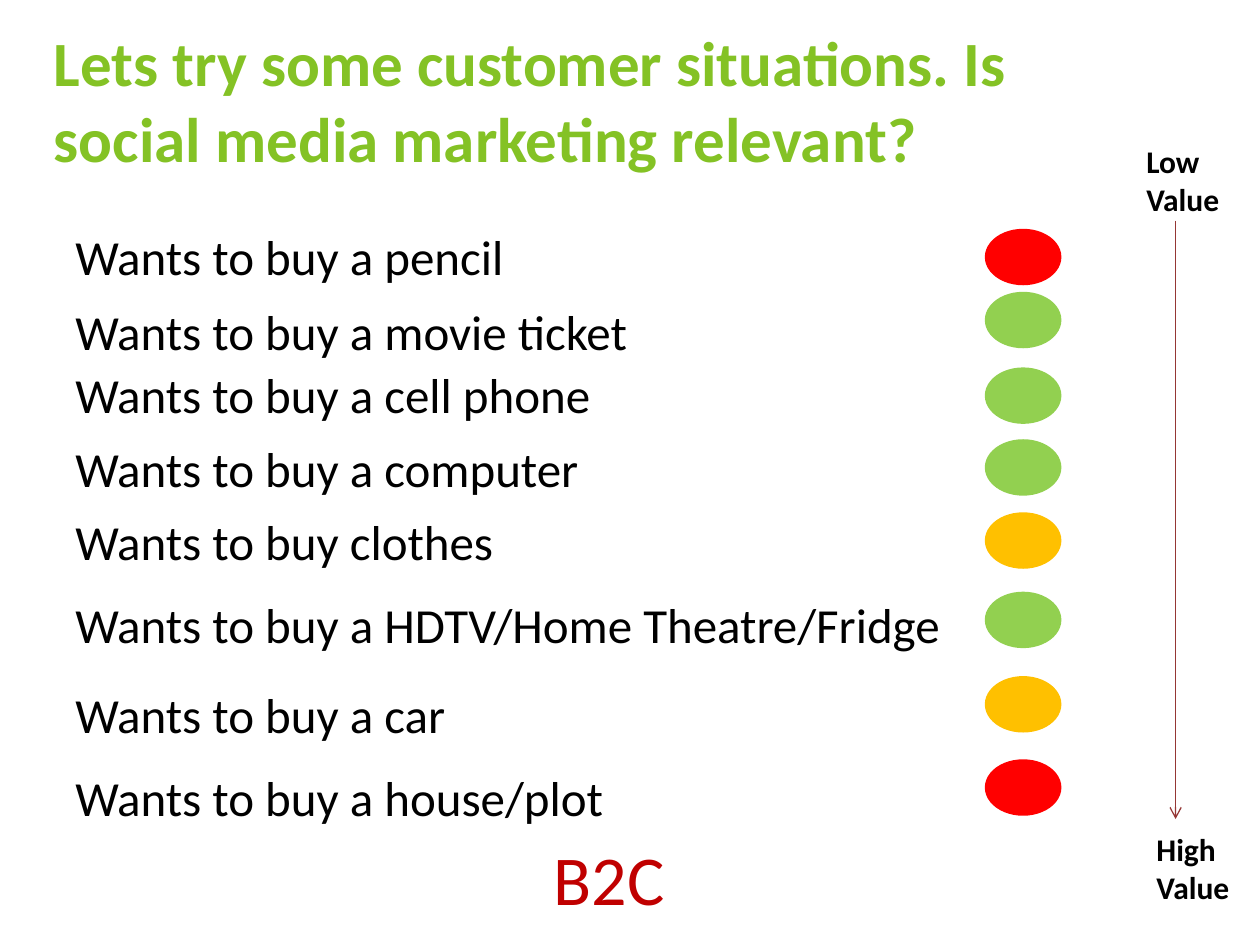
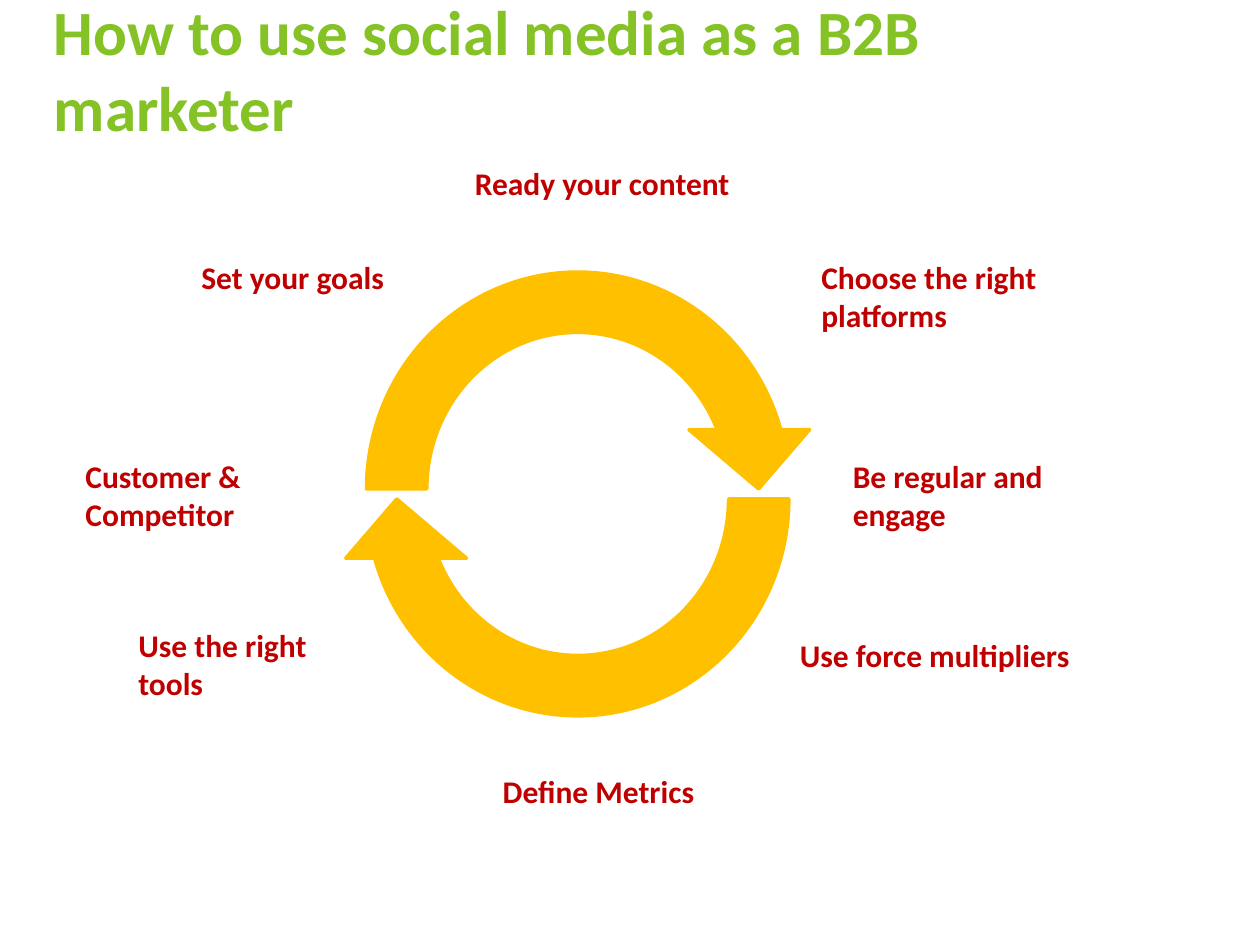
"""Build two slides on when and how social media marketing works."""
from lxml import etree
from pptx import Presentation
from pptx.dml.color import RGBColor
from pptx.enum.shapes import MSO_CONNECTOR, MSO_SHAPE
from pptx.enum.text import MSO_ANCHOR, PP_ALIGN
from pptx.oxml.ns import qn
from pptx.util import Pt

PX = 9144
FONT = "Calibri"
BLACK, TITLE_GREEN, CRIMSON = "000000", "84C225", "C00000"
RED, AMBER, GREEN, MAROON = "FF0000", "FFC000", "92D050", "953735"


def add_text(slide, box, text, size, color, bold=False, align=PP_ALIGN.LEFT, anchor=MSO_ANCHOR.TOP):
    frame = slide.shapes.add_textbox(*(value * PX for value in box)).text_frame
    frame.word_wrap = True
    frame.vertical_anchor = anchor
    frame.text = text
    for paragraph in frame.paragraphs:
        paragraph.alignment = align
        for run in paragraph.runs:
            run.font.name = FONT
            run.font.size = Pt(size)
            run.font.bold = bold
            run.font.color.rgb = RGBColor.from_string(color)


def add_solid(slide, kind, box, color):
    solid = slide.shapes.add_shape(kind, *(value * PX for value in box))
    solid.shadow.inherit = False
    solid.fill.solid()
    solid.fill.fore_color.rgb = RGBColor.from_string(color)
    solid.line.color.rgb = RGBColor.from_string(color)
    solid.line.width = Pt(2)
    return solid


deck = Presentation()
deck.slide_width, deck.slide_height = 1000 * PX, 750 * PX
blank = deck.slide_layouts[6]
situations, cycle = deck.slides.add_slide(blank), deck.slides.add_slide(blank)

headings = [
    (situations, 25, "Lets try some customer situations. Is social media marketing relevant?"),
    (cycle, 0, "How to use social media as a B2B marketer"),
]
for slide, top, heading in headings:
    add_text(slide, (33, top, 850, 108), heading, 36, TITLE_GREEN, bold=True, anchor=MSO_ANCHOR.MIDDLE)

purchases = [
    ("a pencil", 175, 183, RED),
    ("a movie ticket", 234, 233, GREEN),
    ("a cell phone", 284, 293, GREEN),
    ("a computer", 343, 350, GREEN),
    ("clothes", 401, 408, AMBER),
    ("a HDTV/Home Theatre/Fridge", 467, 471, GREEN),
    ("a car", 538, 538, AMBER),
    ("a house/plot", 604, 604, RED),
]
for purchase, text_top, light_top, relevance in purchases:
    add_text(situations, (50, text_top, 725, 57), f"Wants to buy {purchase}", 28, BLACK)
    add_solid(situations, MSO_SHAPE.OVAL, (783, light_top, 58, 42), relevance)
add_text(situations, (342, 658, 283, 77), "B2C", 40, CRIMSON, align=PP_ALIGN.CENTER)

value_axis = situations.shapes.add_connector(MSO_CONNECTOR.STRAIGHT, 933 * PX, 175 * PX, 933 * PX, 650 * PX)
value_axis.line.color.rgb = RGBColor.from_string(MAROON)
value_axis.line.width = Pt(0.75)
etree.SubElement(value_axis.line._get_or_add_ln(), qn("a:tailEnd"), type="arrow")
etree.SubElement(value_axis._element.spPr, qn("a:effectLst"))
add_text(situations, (900, 108, 83, 71), "Low Value", 18, BLACK, bold=True)
add_text(situations, (908, 654, 83, 71), "High\nValue", 18, BLACK, bold=True)

for top, rotation in [(192, 0), (200, 180)]:
    half_turn = add_solid(cycle, MSO_SHAPE.CIRCULAR_ARROW, (267, top, 383, 392), AMBER)
    half_turn.rotation = rotation

steps = [
    ("Customer &\nCompetitor", 58, 358, 200, 71, PP_ALIGN.LEFT),
    ("Set your goals", 150, 200, 200, 40, PP_ALIGN.LEFT),
    ("Ready your content", 367, 125, 233, 40, PP_ALIGN.LEFT),
    ("Choose the right platforms", 642, 200, 200, 71, PP_ALIGN.LEFT),
    ("Be regular and engage", 667, 358, 200, 71, PP_ALIGN.LEFT),
    ("Use force multipliers", 625, 500, 242, 40, PP_ALIGN.LEFT),
    ("Define Metrics", 375, 608, 200, 40, PP_ALIGN.CENTER),
    ("Use the right tools", 100, 492, 200, 71, PP_ALIGN.LEFT),
]
for step, left, top, width, height, align in steps:
    add_text(cycle, (left, top, width, height), step, 18, CRIMSON, bold=True, align=align)

deck.save("out.pptx")
